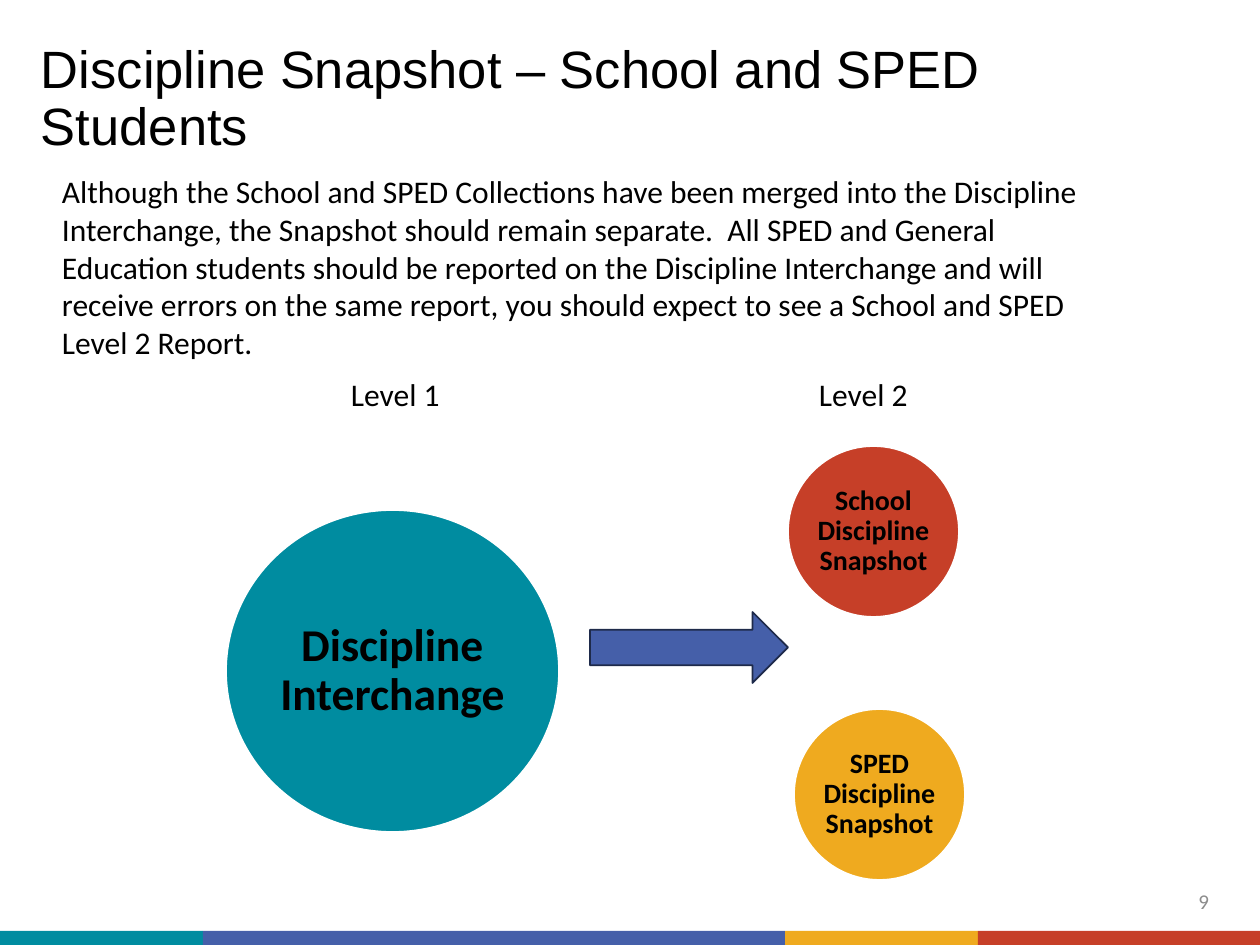
from pptx import Presentation, util as u
from pptx.dml.color import RGBColor
from pptx.enum import shapes, text

TEAL, BLUE, GOLD, RED = "008CA0", "455FA9", "EFAA1F", "C63F28"
SCALE = 914400 / 126


def px(length):
    return u.Emu(round(length * SCALE))


def paint(color_format, color):
    color_format.rgb = RGBColor.from_string(color)


def write(holder, words, size, font="Calibri", color="000000", bold=False,
          align="LEFT", anchor="TOP", spacing=1.0, insets=(13, 6)):
    frame = holder.text_frame
    frame.word_wrap = True
    frame.vertical_anchor = getattr(text.MSO_ANCHOR, anchor)
    frame.margin_left = frame.margin_right = px(insets[0])
    frame.margin_top = frame.margin_bottom = px(insets[1])
    paragraph = frame.paragraphs[0]
    paragraph.alignment = getattr(text.PP_ALIGN, align)
    paragraph.line_spacing = spacing
    run = paragraph.add_run()
    run.text = words
    run.font.name, run.font.size, run.font.bold = font, u.Pt(size), bold
    paint(run.font.color, color)


def label(slide, box, words, size, **style):
    write(slide.shapes.add_textbox(*map(px, box)), words, size, **style)


def solid(slide, kind, box, fill, line=None):
    shape = slide.shapes.add_shape(kind, *map(px, box))
    shape.shadow.inherit = False
    shape.fill.solid()
    paint(shape.fill.fore_color, fill)
    if line:
        paint(shape.line.color, line)
        shape.line.width = u.Pt(1)
    else:
        shape.line.fill.background()
    return shape


def circle(slide, box, words, size, fill, inset):
    disc = solid(slide, shapes.MSO_SHAPE.OVAL, box, fill, "FFFFFF")
    write(disc, words, size, bold=True, align="CENTER", anchor="MIDDLE",
          spacing=0.9, insets=(inset, inset))


def heading(slide, box):
    left, top, width, height = box
    label(slide, (left, top, width, 128), "Discipline Snapshot – School and SPED Students",
          30, font="Arial", anchor="BOTTOM", spacing=0.9, insets=(9, 9))
    label(slide, (left + 17, top + 128, width + 43, height - 128),
          "Although the School and SPED Collections have been merged into the "
          "Discipline Interchange, the Snapshot should remain separate.  All SPED "
          "and General Education students should be reported on the Discipline "
          "Interchange and will receive errors on the same report, you should "
          "expect to see a School and SPED Level 2 Report.", 18)


def flow(slide, box):
    left, top, width, height = box
    for level, offset in (("Level 1", 112), ("Level 2", 580)):
        label(slide, (left + offset, top, 179, 50), level, 18)
    circle(slide, (left, top + 141, 333, 322), "Discipline Interchange", 26, TEAL, 5)
    solid(slide, shapes.MSO_SHAPE.RIGHT_ARROW, (left + 364, top + 243, 198, 71),
          BLUE, "1E2A4A")
    circle(slide, (left + 562, top + 77, 171, 171), "School Discipline Snapshot",
           16, RED, 2)
    circle(slide, (left + width - 171, top + height - 171, 171, 171),
           "SPED Discipline Snapshot", 16, GOLD, 2)


def footer(slide, box):
    left, top, width, height = box
    label(slide, (left + width - 92, top - 55, 50, 50), "9", 12, color="8C8C8C",
          align="RIGHT", anchor="MIDDLE", insets=(9, 6))
    edges = (0, 203, 785, 978, width)
    for start, end, color in zip(edges, edges[1:], (TEAL, BLUE, GOLD, RED)):
        solid(slide, shapes.MSO_SHAPE.RECTANGLE,
              (left + start, top, end - start, height), color)


def main():
    deck = Presentation()
    deck.slide_width, deck.slide_height = px(1260), px(945)
    slide = deck.slides.add_slide(deck.slide_layouts[6])
    heading(slide, (32, 38, 1038, 332))
    flow(slide, (226, 369, 739, 511))
    footer(slide, (0, 931, 1260, 14))
    deck.save("out.pptx")


if __name__ == "__main__":
    main()
